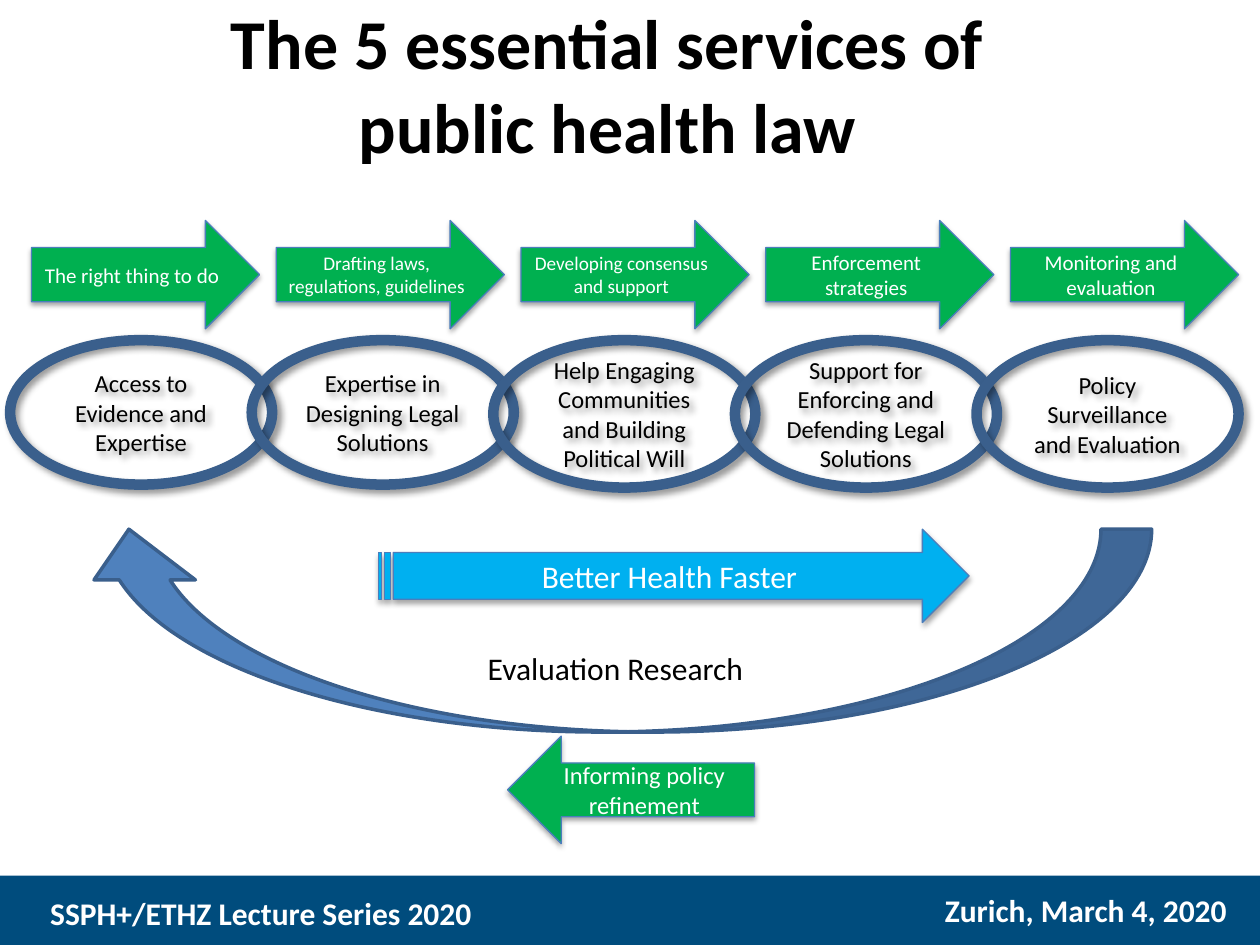
from dataclasses import dataclass

from lxml.etree import SubElement
from pptx import Presentation
from pptx.dml.color import RGBColor
from pptx.enum.shapes import MSO_SHAPE
from pptx.enum.text import MSO_ANCHOR, MSO_AUTO_SIZE, PP_ALIGN
from pptx.oxml.ns import qn
from pptx.util import Inches, Pt

PAGE_WIDTH, PAGE_HEIGHT = 10, 7.5
FONT = "Calibri"
WHITE, BLACK = "FFFFFF", "000000"
GREEN, SKY, BLUE, NAVY = "00B050", "00B0F0", "4F81BD", "004C7D"
ARROW_EDGE, RING_EDGE = "4B7EBC", "3A5F8C"

# Shadows: opacity in percent, blur and distance in points, angle in degrees
ARROW_SHADOW = (35, 3.1, 1.8, 90)
RING_SHADOW = (40, 4, 3, 45)

# Step, step size, side inset, service, share of the row its ring fills
SERVICES = [
    ("The right thing to do", 12, 0.1,
     "Access to Evidence and Expertise", 0.98),
    ("Drafting laws, regulations, guidelines", 11, 0,
     "Expertise in Designing Legal Solutions", 0.98),
    ("Developing consensus and support", 11, 0,
     "Help Engaging Communities and Building Political Will", 1),
    ("Enforcement strategies", 12, 0.1,
     "Support for Enforcing and Defending Legal Solutions", 1),
    ("Monitoring and evaluation", 12, 0.1,
     "Policy Surveillance and Evaluation", 1),
]


@dataclass
class Box:
    left: float
    top: float
    width: float
    height: float

    def inches(self):
        return [Inches(n) for n in (self.left, self.top, self.width, self.height)]

    def share(self, left, top, width, height):
        """Return the box at the given shares of this one."""
        return Box(self.left + left * self.width, self.top + top * self.height,
                   width * self.width, height * self.height)

    def columns(self, count, width):
        """Spread equally wide boxes from the left edge to the right edge."""
        pitch = (self.width - width) / (count - 1)
        return [Box(self.left + i * pitch, self.top, width, self.height)
                for i in range(count)]


def colour(value):
    return RGBColor.from_string(value)


def write(frame, text, size, ink, bold=False, align=PP_ALIGN.CENTER):
    frame.text = text
    for para in frame.paragraphs:
        para.alignment = align
        for span in para.runs:
            span.font.name = FONT
            span.font.size = Pt(size)
            span.font.bold = bold
            span.font.color.rgb = colour(ink)


def add_shadow(shape, opacity, blur, distance, angle):
    effects = shape._element.spPr.find(qn("a:effectLst"))
    shadow = SubElement(effects, qn("a:outerShdw"), blurRad=str(Pt(blur)),
                        dist=str(Pt(distance)), dir=str(angle * 60000),
                        rotWithShape="0")
    shade = SubElement(shadow, qn("a:srgbClr"), val=BLACK)
    SubElement(shade, qn("a:alpha"), val=str(opacity * 1000))


def add_figure(page, kind, box, fill=None, edge=None, weight=0.75, shadow=None):
    """Add a preset shape; without fill or edge it is left clear there."""
    shape = page.shapes.add_shape(kind, *box.inches())
    shape.shadow.inherit = False
    if fill:
        shape.fill.solid()
        shape.fill.fore_color.rgb = colour(fill)
    else:
        shape.fill.background()
    if edge:
        shape.line.color.rgb = colour(edge)
        shape.line.width = Pt(weight)
    else:
        shape.line.fill.background()
    if shadow:
        add_shadow(shape, *shadow)
    return shape


def label(shape, text, size, ink, inset=0.1):
    frame = shape.text_frame
    frame.word_wrap = True
    frame.vertical_anchor = MSO_ANCHOR.MIDDLE
    frame.margin_left = frame.margin_right = Inches(inset)
    write(frame, text, size, ink)


def add_arrow(page, kind, box, fill, text, size, inset=0.1):
    arrow = add_figure(page, kind, box, fill, ARROW_EDGE, shadow=ARROW_SHADOW)
    label(arrow, text, size, WHITE, inset)


def add_line_of_text(page, box, text, ink, bold=False):
    frame = page.shapes.add_textbox(*box.inches()).text_frame
    frame.word_wrap = False
    frame.auto_size = MSO_AUTO_SIZE.SHAPE_TO_FIT_TEXT
    write(frame, text, 18, ink, bold, PP_ALIGN.LEFT)


def add_title(page, box):
    title = page.shapes.title
    title.left, title.top, title.width, title.height = box.inches()
    frame = title.text_frame
    frame.auto_size = MSO_AUTO_SIZE.NONE
    frame.vertical_anchor = MSO_ANCHOR.MIDDLE
    write(frame, "The 5 essential services of\vpublic health law", 40, BLACK, True)


def add_steps(page, box):
    columns = box.columns(len(SERVICES), 1.81)
    for cell, (step, size, inset, *_) in zip(columns, SERVICES):
        add_arrow(page, MSO_SHAPE.RIGHT_ARROW, cell, GREEN, step, size, inset)


def add_chain(page, box):
    columns = box.columns(len(SERVICES), 2.08)
    for cell, (*_, service, height) in zip(columns, SERVICES):
        ring = add_figure(page, MSO_SHAPE.OVAL, cell.share(0, 0, 1, height),
                          edge=RING_EDGE, weight=6, shadow=RING_SHADOW)
        label(ring, service, 14, BLACK)


def add_feedback(page, box):
    """Add the returning curve that fills the box, and the labels around it."""
    upright = Box(box.left + (box.width - box.height) / 2,
                  box.top + (box.height - box.width) / 2,
                  box.height, box.width)
    curve = add_figure(page, MSO_SHAPE.CURVED_LEFT_ARROW, upright,
                       BLUE, RING_EDGE, 2)
    curve.rotation = 90
    add_line_of_text(page, box.share(0.37, 0.56, 0.3, 0.25),
                     "Evaluation Research", BLACK)
    add_arrow(page, MSO_SHAPE.STRIPED_RIGHT_ARROW,
              box.share(0.28, 0, 0.55, 0.46), SKY, "Better Health Faster", 18)
    add_arrow(page, MSO_SHAPE.LEFT_ARROW, box.share(0.4, 1.02, 0.23, 0.53),
              GREEN, "Informing policy refinement", 14)


def add_footer(page, box):
    add_figure(page, MSO_SHAPE.RECTANGLE, box, NAVY)
    add_line_of_text(page, box.share(0.03, 0.18, 0.36, 0.73),
                     "SSPH+/ETHZ Lecture Series 2020", WHITE, True)
    add_line_of_text(page, box.share(0.74, 0.13, 0.25, 0.73),
                     "Zurich, March 4, 2020", WHITE, True)


def main():
    deck = Presentation()
    deck.slide_width, deck.slide_height = Inches(PAGE_WIDTH), Inches(PAGE_HEIGHT)
    page = deck.slides.add_slide(deck.slide_layouts[5])
    page.background.fill.solid()
    page.background.fill.fore_color.rgb = colour(WHITE)
    add_footer(page, Box(0, 6.95, PAGE_WIDTH, PAGE_HEIGHT - 6.95))
    add_title(page, Box(0.85, -0.03, 7.94, 1.38))
    add_feedback(page, Box(0.62, 4.2, 8.52, 1.61))
    add_steps(page, Box(0.25, 1.75, 9.58, 0.86))
    add_chain(page, Box(0.08, 2.7, 9.75, 1.17))
    deck.save("out.pptx")


if __name__ == "__main__":
    main()
